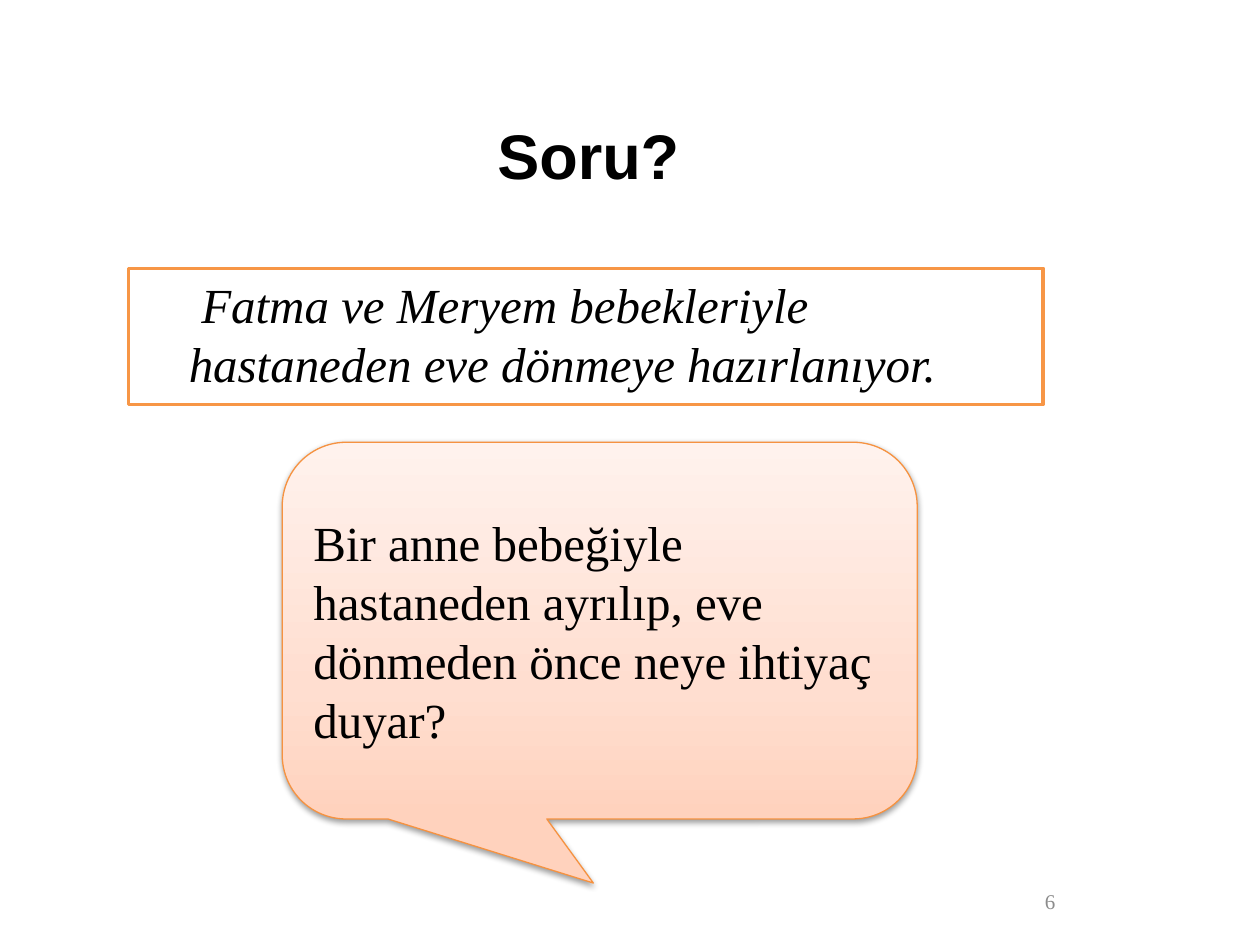
import copy

import pptx
import pptx.dml.color
import pptx.enum.shapes
import pptx.enum.text
import pptx.oxml
import pptx.oxml.ns
import pptx.util

RGBColor = pptx.dml.color.RGBColor
Shape = pptx.enum.shapes.MSO_SHAPE
Align = pptx.enum.text.PP_ALIGN
Anchor = pptx.enum.text.MSO_ANCHOR

BLACK = RGBColor(0x00, 0x00, 0x00)
WHITE = RGBColor(0xFF, 0xFF, 0xFF)
GREY = RGBColor(0x8C, 0x8C, 0x8C)
ORANGE = RGBColor(0xF7, 0x96, 0x46)
DEEP_ORANGE = RGBColor(0xF6, 0x92, 0x40)
PEACH_STOPS = [
    (0, RGBColor(0xFF, 0xD2, 0xBD)),
    (0.35, RGBColor(0xFF, 0xDE, 0xD0)),
    (1, RGBColor(0xFF, 0xF2, 0xED)),
]


class QuestionSlide:
    """Draws styled elements on one slide, placed on a grid of 100 columns by 75 rows."""

    COLUMNS, ROWS = 100, 75
    SERIF, SANS = "Times New Roman", "Arial"

    def __init__(self, deck):
        self.slide = deck.slides.add_slide(deck.slide_layouts[6])
        self.column = deck.slide_width / self.COLUMNS
        self.row = deck.slide_height / self.ROWS

    def place(self, left, top, width, height):
        return (
            int(left * self.column),
            int(top * self.row),
            int(width * self.column),
            int(height * self.row),
        )

    def set_words(self, shape, words, size, anchor=Anchor.MIDDLE, align=Align.LEFT,
                  color=BLACK, **format_values):
        frame = shape.text_frame
        frame.word_wrap = True
        frame.vertical_anchor = anchor
        paragraph = frame.paragraphs[0]
        paragraph.alignment = align
        run = paragraph.add_run()
        run.text = words
        values = {"name": self.SERIF, "size": pptx.util.Pt(size), **format_values}
        for attribute, value in values.items():
            setattr(run.font, attribute, value)
        run.font.color.rgb = color
        return paragraph

    def label(self, area, words, size, **format_values):
        box = self.slide.shapes.add_textbox(*self.place(*area))
        self.set_words(box, words, size, align=Align.CENTER, **format_values)

    def outlined(self, preset, area, color, width):
        shape = self.slide.shapes.add_shape(preset, *self.place(*area))
        shape.shadow.inherit = False
        shape.line.color.rgb = color
        shape.line.width = pptx.util.Pt(width)
        return shape

    def scenario(self, area, words, size):
        panel = self.outlined(Shape.RECTANGLE, area, ORANGE, 2)
        panel.fill.solid()
        panel.fill.fore_color.rgb = WHITE
        paragraph = self.set_words(panel, words, size, anchor=Anchor.TOP, italic=True)
        properties = paragraph._p.get_or_add_pPr()
        properties.set("marL", str(int(3.8 * self.column)))
        properties.set("indent", str(int(self.column)))

    def callout(self, area, words, size, adjustments):
        bubble = self.outlined(Shape.ROUNDED_RECTANGULAR_CALLOUT, area, DEEP_ORANGE, 0.75)
        for index, value in enumerate(adjustments):
            bubble.adjustments[index] = value
        self.blend(bubble, PEACH_STOPS)
        self.drop_shadow(bubble, blur=3.1, distance=1.6, opacity=38)
        self.set_words(bubble, words, size)

    def blend(self, shape, stops):
        shape.fill.gradient()
        shape.fill.gradient_angle = 90
        stop_list = shape._element.spPr.xpath(".//a:gsLst")[0]
        stop_list.append(copy.deepcopy(stop_list[-1]))
        for stop, (position, color) in zip(shape.fill.gradient_stops, stops):
            stop.position = position
            stop.color.rgb = color

    def drop_shadow(self, shape, blur, distance, opacity):
        effects = shape._element.spPr.find(pptx.oxml.ns.qn("a:effectLst"))
        effects.append(pptx.oxml.parse_xml(
            f'<a:outerShdw {pptx.oxml.ns.nsdecls("a")} blurRad="{pptx.util.Pt(blur)}" '
            f'dist="{pptx.util.Pt(distance)}" dir="5400000" rotWithShape="0">'
            f'<a:srgbClr val="{BLACK}"><a:alpha val="{opacity * 1000}"/></a:srgbClr>'
            "</a:outerShdw>"
        ))


def main():
    deck = pptx.Presentation()
    deck.slide_width = pptx.util.Inches(10)
    deck.slide_height = pptx.util.Inches(7.5)

    question = QuestionSlide(deck)
    question.label((5.8, 6, 81.8, 12.5), "Soru?", 36, name=question.SANS, bold=True)
    question.scenario(
        (10.2, 21.3, 72.6, 10.8),
        "Fatma ve Meryem bebekleriyle hastaneden eve dönmeye hazırlanıyor.", 28)
    question.label((71.7, 69.5, 23.3, 4), "6", 12, color=GREY)
    question.callout(
        (22.4, 35.1, 50.4, 29.9),
        "Bir anne bebeğiyle hastaneden ayrılıp, eve dönmeden önce neye ihtiyaç duyar?",
        28, adjustments=(-0.01, 0.67, 0.17))

    deck.save("out.pptx")


if __name__ == "__main__":
    main()
